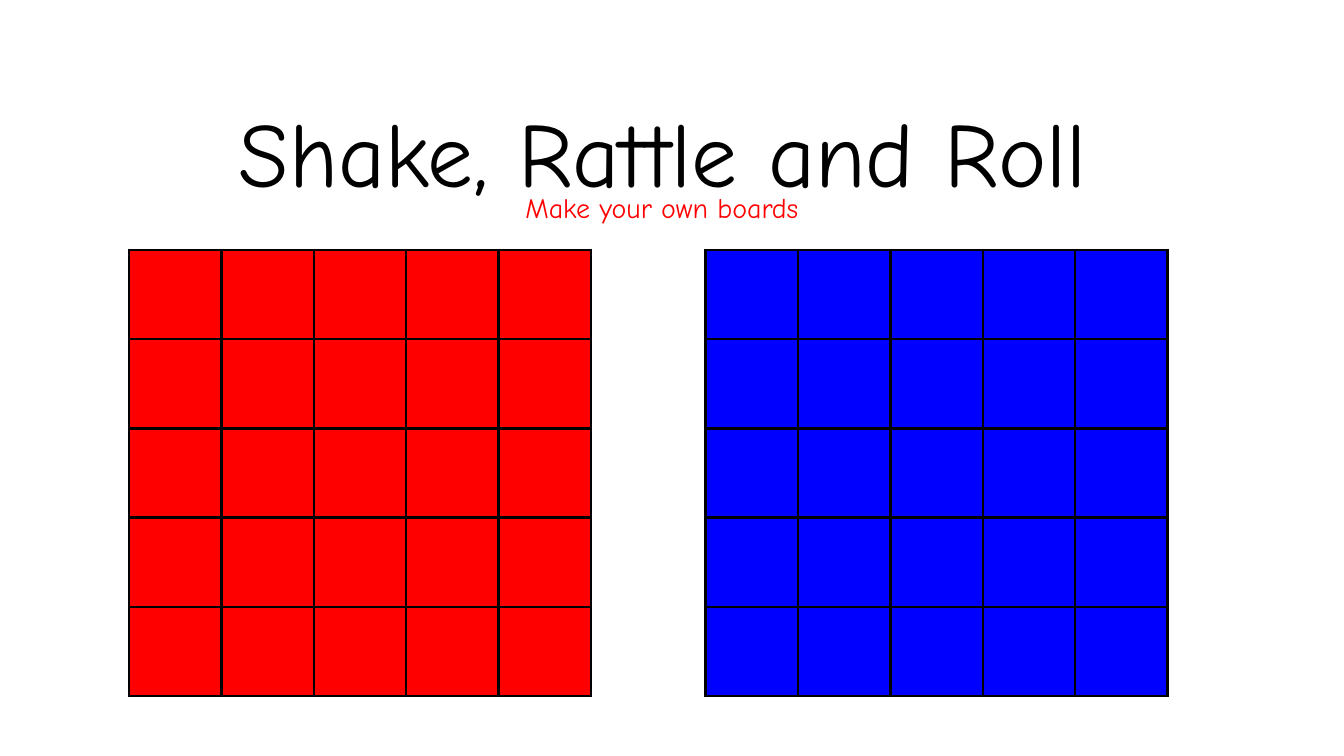
from lxml import etree
from pptx import Presentation
from pptx import util as u
from pptx.dml.color import RGBColor
from pptx.enum import text
from pptx.oxml.ns import qn

# Content
COLORS = {"black": "000000", "red": "FF0000", "blue": "0000FF"}
FONT = "Comic Neue"
TEXTS = [  # wording, size, colour, anchor, (left, top, width, height)
    ("Shake, Rattle and Roll", 49, "black", text.MSO_ANCHOR.BOTTOM, (0.27, 0.48, 9.32, 1.15)),
    ("Make your own boards", 15, "red", text.MSO_ANCHOR.TOP, (2.12, 1.32, 5.61, 0.44)),
]
BOARDS = ["red", "blue"]

# Slide in 16:9, board places in inches, cells in points
SLIDE_W = u.Inches(10)
SLIDE_H = SLIDE_W * 9 // 16
SIZE = 5
CELL_W, CELL_H = u.Pt(49.5), u.Pt(47.8)
BOARD_LEFT, BOARD_TOP, BOARD_STEP = 0.96, 1.86, 4.29
BORDER = u.Pt(1.5)


def add_text(s, wording, size, color, anchor, box):
    tf = s.shapes.add_textbox(*map(u.Inches, box)).text_frame
    tf.word_wrap = True
    tf.vertical_anchor = anchor
    tf.margin_left = tf.margin_right = tf.margin_top = tf.margin_bottom = u.Inches(0.1)
    p = tf.paragraphs[0]
    p.alignment = text.PP_ALIGN.CENTER
    r = p.add_run()
    r.text = wording
    r.font.name, r.font.size = FONT, u.Pt(size)
    r.font.color.rgb = RGBColor.from_string(COLORS[color])


def add_borders(cell):
    tc_pr = cell._tc.get_or_add_tcPr()
    for side in ("lnL", "lnR", "lnT", "lnB"):
        ln = etree.SubElement(tc_pr, qn(f"a:{side}"), w=str(int(BORDER)))
        fill = etree.SubElement(ln, qn("a:solidFill"))
        etree.SubElement(fill, qn("a:srgbClr"), val=COLORS["black"])


def add_board(s, left, color):
    table = s.shapes.add_table(SIZE, SIZE, u.Inches(left), u.Inches(BOARD_TOP),
                               SIZE * CELL_W, SIZE * CELL_H).table
    table.first_row = table.horz_banding = False
    for col in table.columns:
        col.width = CELL_W
    for row in table.rows:
        row.height = CELL_H
    for cell in table.iter_cells():
        add_borders(cell)
        cell.fill.solid()
        cell.fill.fore_color.rgb = RGBColor.from_string(COLORS[color])


def main():
    prs = Presentation()
    prs.slide_width, prs.slide_height = SLIDE_W, SLIDE_H
    s = prs.slides.add_slide(prs.slide_layouts[6])

    # Title and subtitle
    for item in TEXTS:
        add_text(s, *item)

    # Game boards
    for i, color in enumerate(BOARDS):
        add_board(s, BOARD_LEFT + i * BOARD_STEP, color)

    prs.save("out.pptx")


if __name__ == "__main__":
    main()
